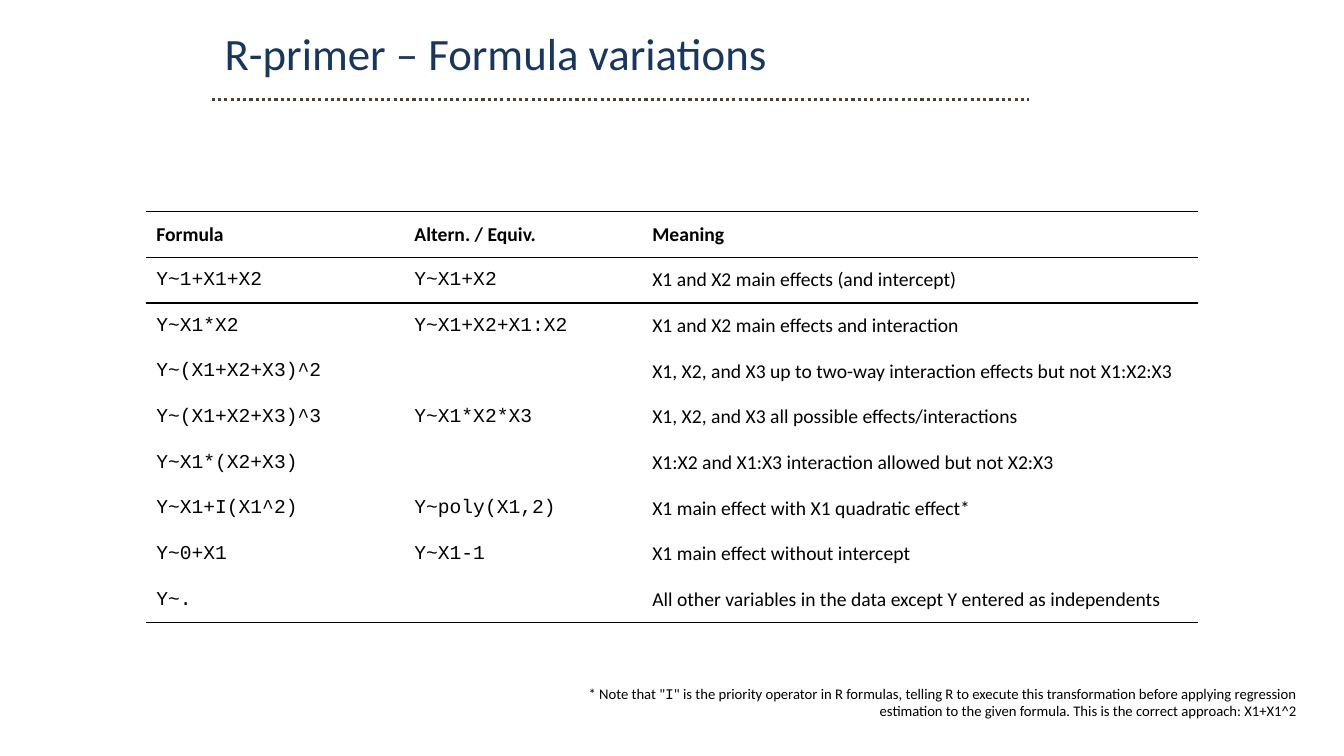
"""Build the slide on variations of R model formulas."""
from lxml.etree import SubElement
from pptx import Presentation
from pptx.dml.color import RGBColor
from pptx.enum.dml import MSO_LINE
from pptx.enum.shapes import MSO_CONNECTOR
from pptx.enum.text import MSO_ANCHOR, PP_ALIGN
from pptx.oxml.ns import qn
from pptx.util import Inches, Pt

TITLE = "R-primer – Formula variations"
HEADER = ("Formula", "Altern. / Equiv.", "Meaning")
FORMULAS = [
    ("Y~1+X1+X2", "Y~X1+X2", "X1 and X2 main effects (and intercept)"),
    ("Y~X1*X2", "Y~X1+X2+X1:X2", "X1 and X2 main effects and interaction"),
    ("Y~(X1+X2+X3)^2", "", "X1, X2, and X3 up to two-way interaction effects but not X1:X2:X3"),
    ("Y~(X1+X2+X3)^3", "Y~X1*X2*X3", "X1, X2, and X3 all possible effects/interactions"),
    ("Y~X1*(X2+X3)", "", "X1:X2 and X1:X3 interaction allowed but not X2:X3"),
    ("Y~X1+I(X1^2)", "Y~poly(X1,2)", "X1 main effect with X1 quadratic effect*"),
    ("Y~0+X1", "Y~X1-1", "X1 main effect without intercept"),
    ("Y~.", "", "All other variables in the data except Y entered as independents"),
]
BODY_FONT, CODE_FONT = "Calibri", "Courier New"
NOTE = [
    ('* Note that "', BODY_FONT),
    ("I", CODE_FONT),
    ('" is the priority operator in R formulas, telling R to execute this transformation '
     "before applying regression estimation to the given formula. "
     "This is the correct approach: X1+X1^2", BODY_FONT),
]
COLUMN_WIDTHS = (2.56, 2.36, 5.51)
TABLE_HEIGHT = 4.08
NAVY = RGBColor(0x17, 0x37, 0x5E)
BROWN = RGBColor(0x4A, 0x45, 0x2A)
BLACK = RGBColor(0, 0, 0)
PLAIN_STYLE = "{2D5ABB26-0587-4C30-8999-92F81FD0307C}"


def set_font(font, size, color, name=BODY_FONT, bold=False):
    font.name, font.size, font.bold = name, Pt(size), bold
    font.color.rgb = color


def add_text_box(slide, left, top, width, height):
    box = slide.shapes.add_textbox(Inches(left), Inches(top), Inches(width), Inches(height))
    box.text_frame.word_wrap = True
    return box.text_frame.paragraphs[0]


def add_border(cell, side):
    line = SubElement(cell._tc.get_or_add_tcPr(), qn(f"a:{side}"), w=str(Pt(1)))
    fill = SubElement(line, qn("a:solidFill"))
    SubElement(fill, qn("a:srgbClr"), val=str(BLACK))


def add_formula_table(slide):
    rows = [HEADER, *FORMULAS]
    table = slide.shapes.add_table(
        len(rows), len(HEADER), Inches(1.45), Inches(2.1),
        Inches(sum(COLUMN_WIDTHS)), Inches(TABLE_HEIGHT)).table
    table.first_row = table.horz_banding = False
    table._tbl.tblPr.find(qn("a:tableStyleId")).text = PLAIN_STYLE
    for column, width in zip(table.columns, COLUMN_WIDTHS):
        column.width = Inches(width)
    last = len(rows) - 1
    for r, row in enumerate(rows):
        table.rows[r].height = Inches(TABLE_HEIGHT / len(rows))
        for c, wording in enumerate(row):
            cell = table.cell(r, c)
            cell.vertical_anchor = MSO_ANCHOR.MIDDLE
            if r in (0, 1):
                add_border(cell, "lnT")
            if r in (0, last):
                add_border(cell, "lnB")
            cell.fill.background()
            cell.text_frame.text = wording
            is_code = r > 0 and c < 2
            set_font(cell.text_frame.paragraphs[0].font, 14, BLACK,
                     CODE_FONT if is_code else BODY_FONT, bold=r == 0)


def main():
    prs = Presentation()
    prs.slide_width, prs.slide_height = Inches(13.33), Inches(7.5)
    slide = prs.slides.add_slide(prs.slide_layouts[6])

    title = add_text_box(slide, 2.13, 0.21, 8.94, 0.64)
    title.text = TITLE
    set_font(title.runs[0].font, 32, NAVY)

    rule = slide.shapes.add_connector(
        MSO_CONNECTOR.STRAIGHT, Inches(2.1), Inches(0.99), Inches(10.21), Inches(0.99))
    rule.line.color.rgb = BROWN
    rule.line.width = Pt(2.25)
    rule.line.dash_style = MSO_LINE.ROUND_DOT
    SubElement(rule._element.spPr, qn("a:effectLst"))

    add_formula_table(slide)

    note = add_text_box(slide, 5.56, 6.74, 7.4, 0.47)
    note.alignment = PP_ALIGN.RIGHT
    for wording, font_name in NOTE:
        run = note.add_run()
        run.text = wording
        set_font(run.font, 10.5, BLACK, font_name)

    prs.save("out.pptx")


if __name__ == "__main__":
    main()
